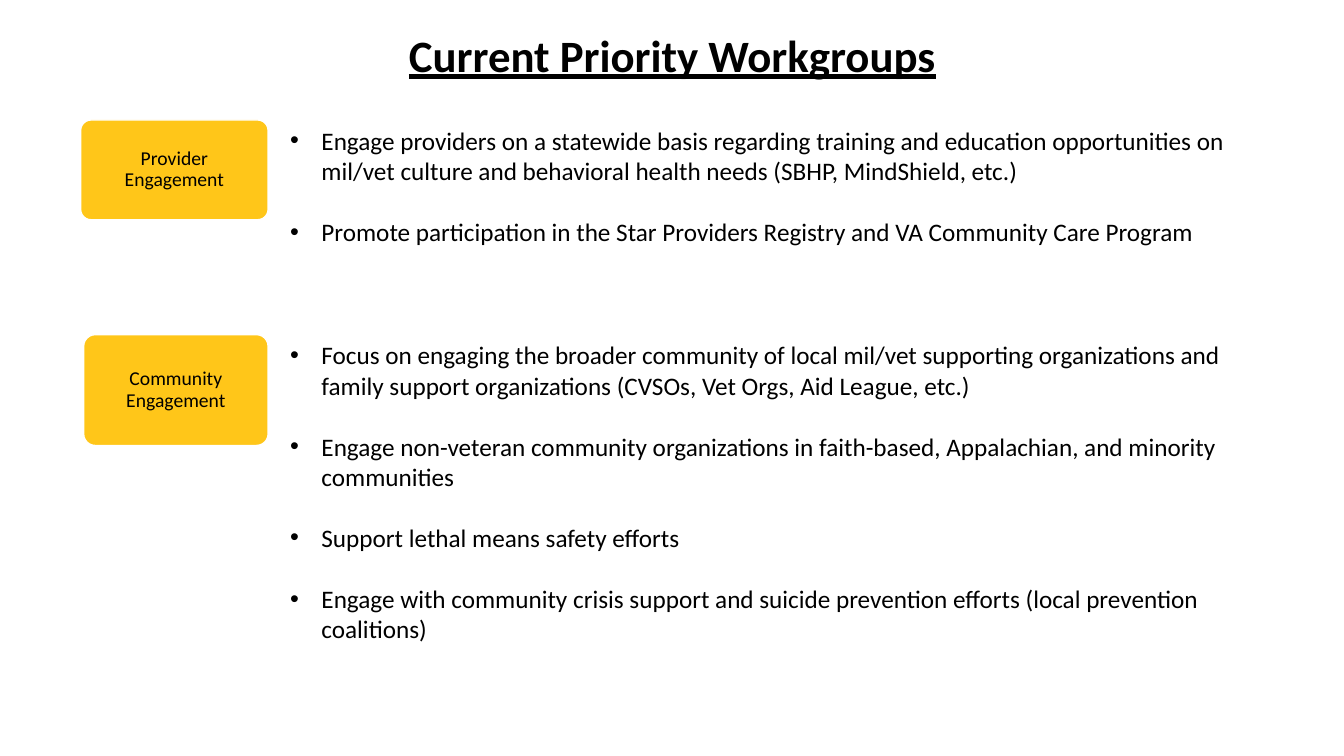
from dataclasses import dataclass

from lxml import etree
from pptx import Presentation
from pptx import util as u
from pptx.dml.color import RGBColor
from pptx.enum import shapes, text
from pptx.oxml.ns import qn

BLACK, WHITE, GOLD = "000000", "FFFFFF", "FFC000"
BULLET_INDENT = u.Inches(0.31)
GOALS_LEFT, GOALS_WIDTH = 2.78, 9.48


@dataclass
class Workgroup:
    name: str
    left: float
    top: float
    width: float
    height: float
    goals_height: float
    goals: list[str]


WORKGROUPS = [
    Workgroup("Provider Engagement", 0.8, 1.19, 1.86, 0.99, 1.31, [
        "Engage providers on a statewide basis regarding training and education "
        "opportunities on mil/vet culture and behavioral health needs "
        "(SBHP, MindShield, etc.)",
        "Promote participation in the Star Providers Registry and VA Community "
        "Care Program",
    ]),
    Workgroup("Community Engagement", 0.83, 3.32, 1.83, 1.1, 3.13, [
        "Focus on engaging the broader community of local mil/vet supporting "
        "organizations and family support organizations "
        "(CVSOs, Vet Orgs, Aid League, etc.)",
        "Engage non-veteran community organizations in faith-based, Appalachian, "
        "and minority communities",
        "Support lethal means safety efforts",
        "Engage with community crisis support and suicide prevention efforts "
        "(local prevention coalitions)",
    ]),
]


def rgb(color: str) -> RGBColor:
    return RGBColor.from_string(color)


def apply(target, formats: dict) -> None:
    for attribute, value in formats.items():
        setattr(target, attribute, value)


def format_font(paragraph, size: int, **extra) -> None:
    apply(paragraph.font, {"name": "Calibri", "size": u.Pt(size), **extra})
    paragraph.font.color.rgb = rgb(BLACK)


def add_title(slide, wording: str) -> None:
    title = slide.shapes.title
    apply(title, {"left": u.Inches(3.1), "top": u.Inches(0.22),
                  "width": u.Inches(7.14), "height": u.Inches(0.64)})
    frame = title.text_frame
    frame.text = wording
    apply(frame, {"auto_size": text.MSO_AUTO_SIZE.NONE, "word_wrap": True,
                  "vertical_anchor": text.MSO_ANCHOR.TOP})
    heading = frame.paragraphs[0]
    heading.alignment = text.PP_ALIGN.CENTER
    format_font(heading, 32, bold=True, underline=True)


def add_label(slide, group: Workgroup) -> None:
    label = slide.shapes.add_shape(
        shapes.MSO_SHAPE.ROUNDED_RECTANGLE, u.Inches(group.left),
        u.Inches(group.top), u.Inches(group.width), u.Inches(group.height))
    label.adjustments[0] = 0.105
    label.shadow.inherit = False
    label.fill.solid()
    label.fill.fore_color.rgb = rgb(GOLD)
    fill_color = label.fill._xPr.find(qn("a:solidFill"))[0]
    etree.SubElement(fill_color, qn("a:alpha"), val="90000")
    label.line.color.rgb = rgb(WHITE)
    label.line.width = u.Pt(1)

    frame = label.text_frame
    frame.text = group.name
    inset = u.Inches(0.07)
    apply(frame, {"word_wrap": True, "vertical_anchor": text.MSO_ANCHOR.MIDDLE,
                  "margin_left": inset, "margin_right": inset,
                  "margin_top": inset, "margin_bottom": inset})
    name = frame.paragraphs[0]
    apply(name, {"alignment": text.PP_ALIGN.CENTER, "line_spacing": 0.9,
                 "space_after": u.Pt(5)})
    format_font(name, 14)


def add_goals(slide, group: Workgroup) -> None:
    frame = slide.shapes.add_textbox(
        u.Inches(GOALS_LEFT), u.Inches(group.top), u.Inches(GOALS_WIDTH),
        u.Inches(group.goals_height)).text_frame
    frame.word_wrap = True
    for index, wording in enumerate(group.goals):
        goal = frame.add_paragraph() if index else frame.paragraphs[0]
        goal.text = wording
        properties = goal._p.get_or_add_pPr()
        properties.set("marL", str(BULLET_INDENT))
        properties.set("indent", str(-BULLET_INDENT))
        etree.SubElement(properties, qn("a:buFont"), typeface="Arial")
        etree.SubElement(properties, qn("a:buChar"), char="•")
        if index:
            goal.space_before = u.Pt(22)
        format_font(goal, 18)


def main() -> None:
    deck = Presentation()
    deck.slide_width, deck.slide_height = u.Inches(13.33), u.Inches(7.5)
    slide = deck.slides.add_slide(deck.slide_layouts.get_by_name("Title Only"))
    add_title(slide, "Current Priority Workgroups")
    for group in WORKGROUPS:
        add_label(slide, group)
        add_goals(slide, group)
    deck.save("out.pptx")


if __name__ == "__main__":
    main()
